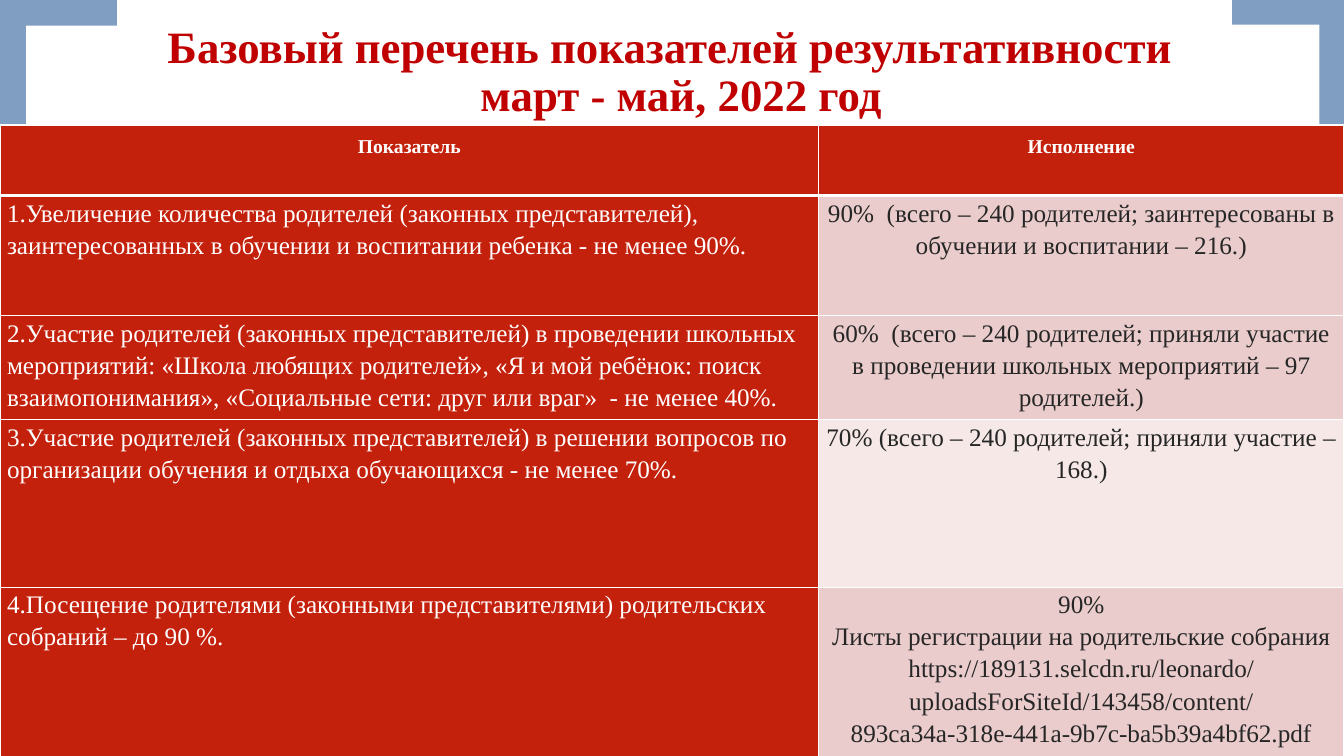
"""Builds the slide with the list of performance indicators for March to May 2022."""
from dataclasses import dataclass

from lxml import etree
from pptx import Presentation
from pptx.dml.color import RGBColor
from pptx.enum import shapes, text
from pptx.oxml import ns
from pptx.util import Inches, Pt


@dataclass(frozen=True)
class Theme:
    font: str = "Times New Roman"
    title: str = "C00000"
    corner: str = "809EC2"
    red: str = "C4210D"
    pink: str = "EACCCC"
    pale: str = "F5E8E7"
    white: str = "FFFFFF"
    dark: str = "262626"
    title_size: int = 32
    header_size: int = 14
    body_size: int = 18


theme = Theme()


def style(paragraph, size, color, bold, align, spacing):
    font = paragraph.font
    font.name, font.size, font.bold = theme.font, Pt(size), bold
    font.color.rgb = RGBColor.from_string(color)
    paragraph.alignment = align
    paragraph.line_spacing = spacing


def add_borders(cell, top, bottom):
    properties = cell._tc.get_or_add_tcPr()
    widths = {"a:lnL": 1, "a:lnR": 1, "a:lnT": top, "a:lnB": bottom}
    for position, (side, width) in enumerate(widths.items()):
        line = etree.Element(ns.qn(side), w=str(Pt(width)))
        fill = etree.SubElement(line, ns.qn("a:solidFill"))
        etree.SubElement(fill, ns.qn("a:srgbClr"), val=theme.white)
        properties.insert(position, line)


presentation = Presentation()
presentation.slide_width, presentation.slide_height = Inches(13.33), Inches(7.5)
slide = presentation.slides.add_slide(presentation.slide_layouts[6])
center, left = text.PP_ALIGN.CENTER, text.PP_ALIGN.LEFT

corners = [
    (0, 5.94, 1.11, 1.56, 0),
    (12.22, 0, 1.11, 1.56, 180),
    (12.02, 6.14, 1.56, 1.16, 270),
    (-0.2, 0.2, 1.56, 1.16, 90),
]
for *place, rotation in corners:
    corner = slide.shapes.add_shape(shapes.MSO_SHAPE.CORNER, *map(Inches, place))
    corner.rotation = rotation
    corner.adjustments[0], corner.adjustments[1] = 0.22, 0.22
    corner.shadow.inherit = False
    corner.fill.solid()
    corner.fill.fore_color.rgb = RGBColor.from_string(theme.corner)
    corner.line.fill.background()

title = slide.shapes.add_textbox(Inches(0.95), 0, Inches(11.5), Inches(1.45)).text_frame
title.word_wrap = True
title.vertical_anchor = text.MSO_ANCHOR.MIDDLE
heading = title.paragraphs[0]
heading.text = "Базовый перечень показателей результативности \v март - май, 2022 год"
style(heading, theme.title_size, theme.title, True, center, 0.9)

indicators = [
    ("Показатель", "Исполнение", 0.7, theme.red),
    ("1.Увеличение количества родителей (законных представителей), "
     "заинтересованных в обучении и воспитании ребенка - не менее 90%.",
     "90%  (всего – 240 родителей; заинтересованы в обучении и воспитании – 216.)",
     1.19, theme.pink),
    ("2.Участие родителей (законных представителей) в проведении школьных мероприятий: "
     "«Школа любящих родителей», «Я и мой ребёнок: поиск взаимопонимания», "
     "«Социальные сети: друг или враг»  - не менее 40%.",
     "60%  (всего – 240 родителей; приняли участие в проведении школьных "
     "мероприятий – 97 родителей.)",
     1.01, theme.pink),
    ("3.Участие родителей (законных представителей) в решении вопросов по "
     "организации обучения и отдыха обучающихся - не менее 70%.",
     "70% (всего – 240 родителей; приняли участие – 168.)",
     1.66, theme.pale),
    ("4.Посещение родителями (законными представителями) родительских "
     "собраний – до 90 %.",
     "90%\nЛисты регистрации на родительские собрания\n"
     "https://189131.selcdn.ru/leonardo/uploadsForSiteId/143458/content/"
     "893ca34a-318e-441a-9b7c-ba5b39a4bf62.pdf",
     1.65, theme.pink),
]
table = slide.shapes.add_table(
    len(indicators), 2, 0, Inches(1.24), Inches(13.33), Inches(6.21)).table
table.columns[0].width, table.columns[1].width = Inches(8.12), Inches(5.21)

for row, (indicator, result, height, result_fill) in enumerate(indicators):
    table.rows[row].height = Inches(height)
    header = row == 0
    for column, (words, fill) in enumerate([(indicator, theme.red), (result, result_fill)]):
        cell = table.cell(row, column)
        cell.text = words
        cell.margin_left = cell.margin_right = Inches(0 if header else 0.07)
        cell.margin_top = cell.margin_bottom = 0
        cell.fill.solid()
        cell.fill.fore_color.rgb = RGBColor.from_string(fill)
        add_borders(cell, top=3 if row == 1 else 1, bottom=3 if header else 1)
        for paragraph in cell.text_frame.paragraphs:
            if header:
                style(paragraph, theme.header_size, theme.white, True, center, Pt(23.4))
            elif column == 0:
                style(paragraph, theme.body_size, theme.white, False, left, 1.15)
            else:
                style(paragraph, theme.body_size, theme.dark, False, center, 1.15)

presentation.save("out.pptx")
